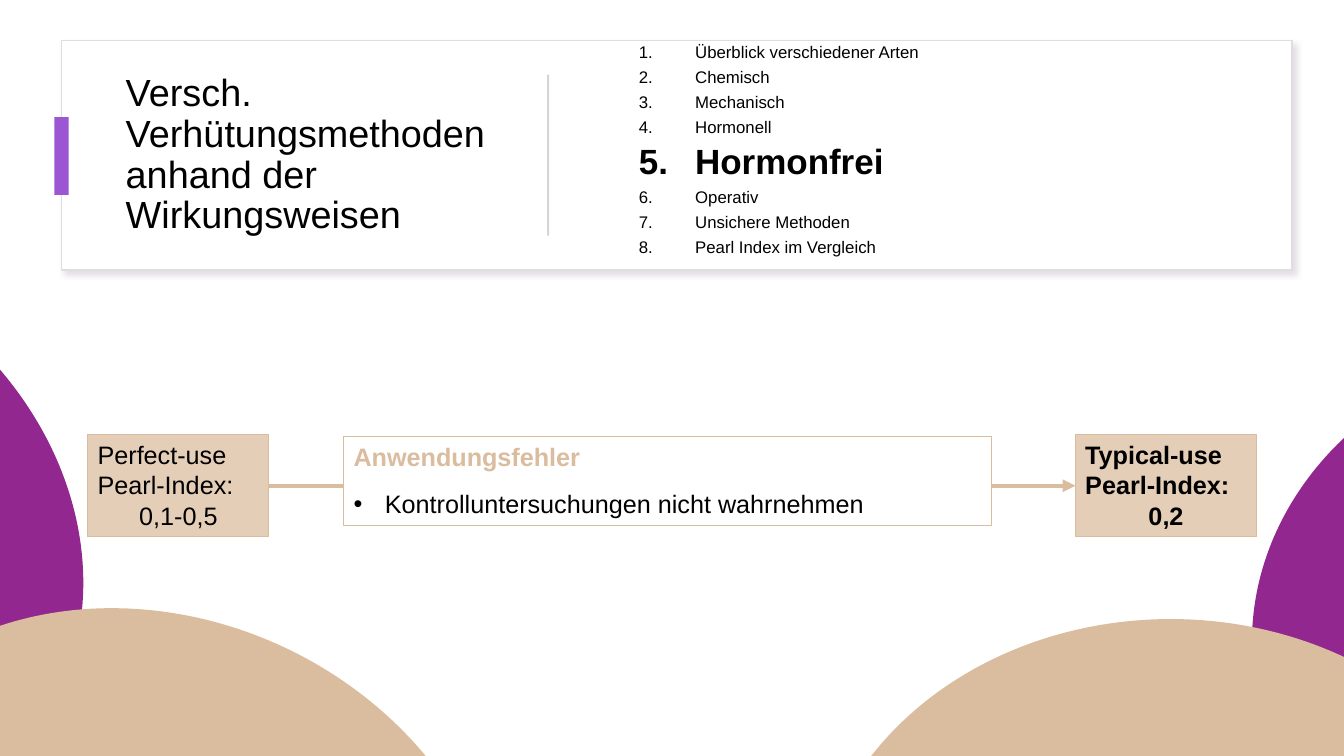
from dataclasses import dataclass
from typing import Optional

from lxml import etree
from pptx import Presentation
from pptx.dml.color import RGBColor
from pptx.enum.shapes import MSO_CONNECTOR, MSO_SHAPE
from pptx.enum.text import MSO_ANCHOR, PP_ALIGN
from pptx.oxml.ns import qn
from pptx.util import Cm, Pt

RECTANGLE, OVAL = MSO_SHAPE.RECTANGLE, MSO_SHAPE.OVAL
STRAIGHT = MSO_CONNECTOR.STRAIGHT
TOP, MIDDLE = MSO_ANCHOR.TOP, MSO_ANCHOR.MIDDLE
LEFT, CENTER = PP_ALIGN.LEFT, PP_ALIGN.CENTER

BLACK = RGBColor(0x00, 0x00, 0x00)
WHITE = RGBColor(0xFF, 0xFF, 0xFF)
FRAME_GREY = RGBColor(0xDE, 0xDE, 0xDE)
DIVIDER_GREY = RGBColor(0xD5, 0xD5, 0xD5)
VIOLET = RGBColor(0x9B, 0x57, 0xD3)
PURPLE = RGBColor(0x92, 0x27, 0x8F)
SAND = RGBColor(0xDA, 0xBC, 0x9E)
LIGHT_SAND = RGBColor(0xE4, 0xCE, 0xB7)
FONT = "Arial"


@dataclass(frozen=True)
class Area:
    left: float
    top: float
    width: float
    height: float

    def lengths(self) -> tuple:
        return Cm(self.left), Cm(self.top), Cm(self.width), Cm(self.height)


@dataclass(frozen=True)
class Line:
    text: str
    size: float = 18
    bold: bool = False
    color: RGBColor = BLACK
    align: PP_ALIGN = LEFT
    spacing: float = 1.0
    before: float = 0
    after: float = 0
    bullet: Optional[str] = None
    indent: float = 0
    hanging: float = 0


@dataclass(frozen=True)
class Ellipse:
    left: float
    top: float
    color: RGBColor
    rotation: float = 0


@dataclass(frozen=True)
class IndexBox:
    left: float
    label: str
    value: str
    bold: bool


AGENDA = ["Überblick verschiedener Arten", "Chemisch", "Mechanisch", "Hormonell",
          "Hormonfrei", "Operativ", "Unsichere Methoden", "Pearl Index im Vergleich"]
CURRENT_TOPIC = "Hormonfrei"

INDEX_BOXES = [
    IndexBox(2.21, "Perfect-use Pearl-Index:", "0,1-0,5", False),
    IndexBox(27.1, "Typical-use Pearl-Index:", "0,2", True),
]

ELLIPSES = [
    Ellipse(31.55, 8.48, PURPLE),
    Ellipse(20.45, 15.6, SAND),
    Ellipse(-15.77, 5.97, PURPLE, 25.9),
    Ellipse(-5.13, 15.6, SAND, 25.9),
]


def add_figure(page, kind, area: Area, fill: RGBColor,
               outline: Optional[RGBColor] = None, weight: float = 0.75):
    figure = page.shapes.add_shape(kind, *area.lengths())
    figure.shadow.inherit = False
    figure.fill.solid()
    figure.fill.fore_color.rgb = fill
    if outline is None:
        figure.line.fill.background()
    else:
        figure.line.color.rgb = outline
        figure.line.width = Pt(weight)
    return figure


def add_bullet(para, line: Line) -> None:
    properties = para._p.get_or_add_pPr()
    properties.set("marL", str(Cm(line.indent)))
    properties.set("indent", str(-Cm(line.hanging)))
    if line.bullet == "number":
        etree.SubElement(properties, qn("a:buAutoNum"), type="arabicPeriod")
    else:
        etree.SubElement(properties, qn("a:buFont"), typeface=FONT)
        etree.SubElement(properties, qn("a:buChar"), char=line.bullet)


def write_lines(box, lines: list[Line], anchor: MSO_ANCHOR = TOP) -> None:
    frame = box.text_frame
    frame.word_wrap = True
    frame.vertical_anchor = anchor
    for position, line in enumerate(lines):
        para = frame.add_paragraph() if position else frame.paragraphs[0]
        para.text = line.text
        para.alignment = line.align
        para.line_spacing = line.spacing
        para.space_before = Pt(line.before if position else 0)
        para.space_after = Pt(line.after)
        if line.bullet:
            add_bullet(para, line)
        for span in para.runs:
            span.font.name = FONT
            span.font.size = Pt(line.size)
            span.font.bold = line.bold
            span.font.color.rgb = line.color


def add_soft_shadow(figure) -> None:
    effects = figure._element.spPr.find(qn("a:effectLst"))
    shadow = etree.SubElement(effects, qn("a:outerShdw"), blurRad=str(Pt(4)),
                              dist=str(Pt(3)), dir="2700000", algn="tl", rotWithShape="0")
    color = etree.SubElement(shadow, qn("a:srgbClr"), val="CABECD")
    etree.SubElement(color, qn("a:alpha"), val="50000")


def add_arrow(page, start: float, end: float, height: float) -> None:
    arrow = page.shapes.add_connector(STRAIGHT, Cm(start), Cm(height), Cm(end), Cm(height))
    arrow.line.color.rgb = SAND
    arrow.line.width = Pt(3)
    etree.SubElement(arrow.line._get_or_add_ln(), qn("a:tailEnd"), type="triangle")
    etree.SubElement(arrow._element.spPr, qn("a:effectLst"))


def agenda_line(topic: str) -> Line:
    current = topic == CURRENT_TOPIC
    return Line(topic, size=25 if current else 12, bold=current, spacing=0.9,
                before=5, bullet="number", indent=2.69, hanging=1.42)


def main() -> None:
    deck = Presentation()
    deck.slide_width, deck.slide_height = Cm(33.87), Cm(19.05)
    page = deck.slides.add_slide(deck.slide_layouts[6])

    # Header with title, accent, divider and agenda
    header = add_figure(page, RECTANGLE, Area(1.55, 1.02, 31.01, 5.79), WHITE, FRAME_GREY, 1)
    add_soft_shadow(header)
    title = page.shapes.add_textbox(*Area(2.92, 1.63, 10.16, 4.57).lengths())
    write_lines(title, [Line("Versch. Verhütungsmethoden anhand der Wirkungsweisen",
                             size=27, spacing=0.9)], MIDDLE)
    add_figure(page, RECTANGLE, Area(1.37, 2.95, 0.36, 1.96), VIOLET)
    add_figure(page, RECTANGLE, Area(13.79, 1.88, 0.05, 4.06), DIVIDER_GREY)
    agenda = page.shapes.add_textbox(*Area(14.58, 1.02, 16.97, 5.56).lengths())
    write_lines(agenda, [agenda_line(topic) for topic in AGENDA], MIDDLE)

    # Arrow from perfect use to typical use
    add_arrow(page, 6.78, 27.1, 12.24)
    for index in INDEX_BOXES:
        box = add_figure(page, RECTANGLE, Area(index.left, 10.95, 4.57, 2.57),
                         LIGHT_SAND, SAND)
        write_lines(box, [Line(index.label, bold=index.bold),
                          Line(index.value, bold=index.bold, align=CENTER)])

    # Corner ellipses
    for ellipse in ELLIPSES:
        figure = add_figure(page, OVAL, Area(ellipse.left, ellipse.top, 18.11, 15.42),
                            ellipse.color)
        figure.rotation = ellipse.rotation

    # Application errors
    errors = add_figure(page, RECTANGLE, Area(8.66, 11, 16.33, 2.24), WHITE, SAND)
    write_lines(errors, [
        Line("Anwendungsfehler", bold=True, color=SAND, after=12),
        Line("Kontrolluntersuchungen nicht wahrnehmen", after=12,
             bullet="•", indent=0.79, hanging=0.79),
    ])

    deck.save("out.pptx")


if __name__ == "__main__":
    main()
